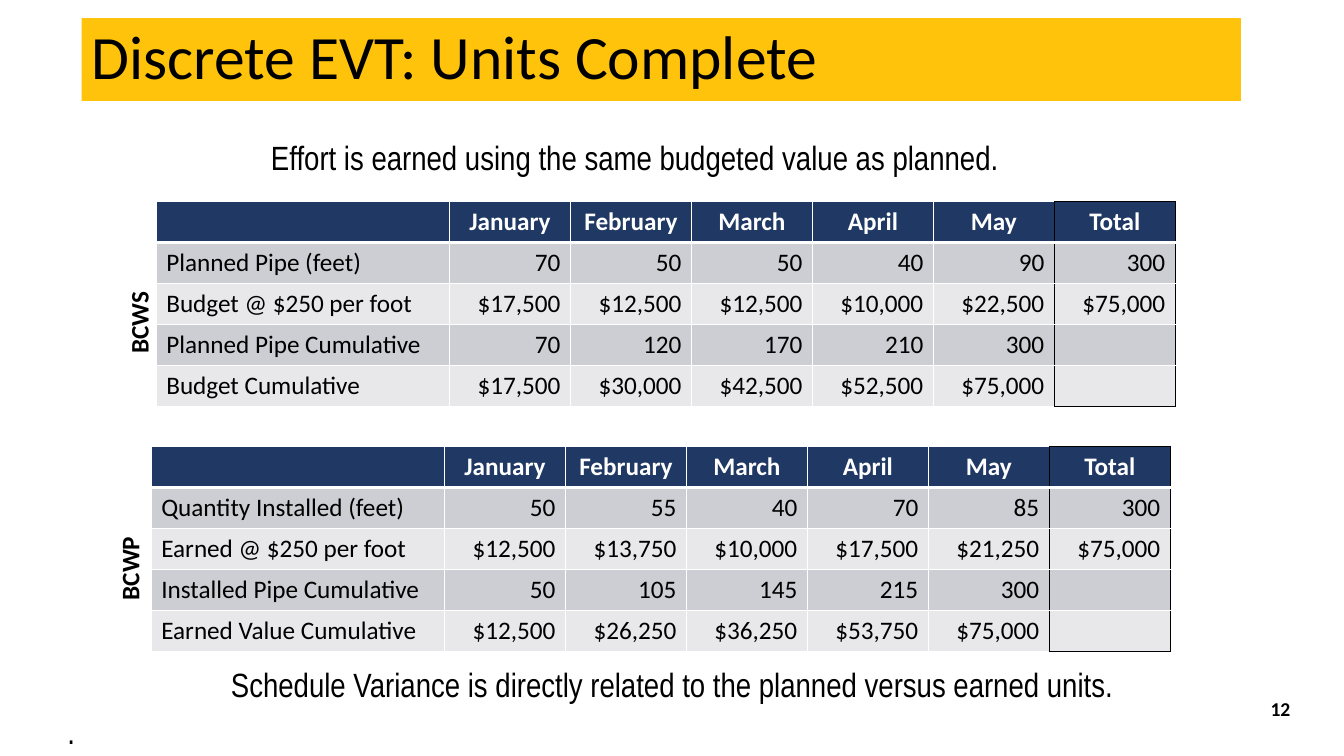
from itertools import accumulate

from lxml import etree
from pptx import Presentation
from pptx.dml.color import RGBColor
from pptx.enum.shapes import MSO_SHAPE
from pptx.enum.text import MSO_ANCHOR, MSO_AUTO_SIZE, PP_ALIGN
from pptx.oxml.ns import qn
from pptx.util import Inches, Pt

LEFT, CENTER, RIGHT = PP_ALIGN.LEFT, PP_ALIGN.CENTER, PP_ALIGN.RIGHT
TOP, MIDDLE = MSO_ANCHOR.TOP, MSO_ANCHOR.MIDDLE
GROW = MSO_AUTO_SIZE.SHAPE_TO_FIT_TEXT
RECT = MSO_SHAPE.RECTANGLE

BLACK = RGBColor(0, 0, 0)
WHITE = RGBColor(0xFF, 0xFF, 0xFF)
GOLD = RGBColor(0xFF, 0xC3, 0x0C)
NAVY = RGBColor(0x1F, 0x38, 0x64)
BANDS = RGBColor(0xE8, 0xE8, 0xEA), RGBColor(0xCD, 0xCE, 0xD3)

# The slide is a grid of 133.33 columns by 75 rows
GRID = Inches(0.1)
COLS, ROWS = 133.33, 75
LABEL, MONTH, LINE = 29.1, 12, 4.07

RATE = 250
HEADS = ["", "January", "February", "March", "April", "May", "Total"]
PLAN = [70, 50, 50, 40, 90]
DONE = [50, 55, 40, 70, 85]
PLAN_ROWS = ["Planned Pipe (feet)", "Budget @ $250 per foot",
             "Planned Pipe Cumulative", "Budget Cumulative"]
DONE_ROWS = ["Quantity Installed (feet)", "Earned @ $250 per foot",
             "Installed Pipe Cumulative", "Earned Value Cumulative"]

BODY = {"name": "Calibri", "size": Pt(18), "bold": False}
BOLD = {**BODY, "bold": True}
TITLE = {**BODY, "size": Pt(44)}
NUMBER = {**BOLD, "size": Pt(14)}
NOTE = {**BODY, "name": "Arial Narrow", "size": Pt(24)}


def span(*cells):
    return [round(n * GRID) for n in cells]


def apply(item, values):
    for key, value in values.items():
        setattr(item, key, value)


def write(par, text, font, align=LEFT, color=BLACK):
    par.alignment = align
    if text:
        run = par.add_run()
        run.text = text
        apply(run.font, font)
        run.font.color.rgb = color


def add_text(slide, box, lines, font, align=LEFT, anchor=TOP, turn=0):
    shape = slide.shapes.add_textbox(*span(*box))
    shape.rotation = turn
    frame = shape.text_frame
    apply(frame, {"word_wrap": True, "vertical_anchor": anchor})
    if anchor == TOP:
        frame.auto_size = GROW
    for i, text in enumerate(lines):
        par = frame.add_paragraph() if i else frame.paragraphs[0]
        write(par, text, font, LEFT if i else align)
    return frame


def add_note(slide, box, lines, align=LEFT):
    # Hanging indent with a little space before each line
    for par in add_text(slide, box, lines, NOTE, align).paragraphs:
        par.space_before = Pt(4.8)
        props = par._p.get_or_add_pPr()
        props.set("marL", str(Inches(0.25)))
        props.set("indent", str(-Inches(0.25)))


def add_title(slide, box, text):
    bar = slide.shapes.add_shape(RECT, *span(*box))
    bar.shadow.inherit = False
    bar.fill.solid()
    bar.fill.fore_color.rgb = GOLD
    bar.line.fill.background()
    apply(bar.text_frame, {"word_wrap": True, "vertical_anchor": MIDDLE})
    par = bar.text_frame.paragraphs[0]
    par.line_spacing = 0.9
    write(par, text, TITLE)


def add_edge(cell, side, color, width):
    props = cell._tc.get_or_add_tcPr()
    line = etree.SubElement(props, qn("a:ln" + side), w=str(Pt(width)))
    fill = etree.SubElement(line, qn("a:solidFill"))
    etree.SubElement(fill, qn("a:srgbClr"), val=str(color))


def edge_cell(cell, row, col, last):
    # The total column is framed in black, all other edges are white
    total = col == len(HEADS) - 1
    dark = {"L": total, "R": col >= len(HEADS) - 2,
            "T": total and row == 0, "B": total and row == last}
    thick = {"T": row == 1, "B": row == 0}
    for side, black in dark.items():
        add_edge(cell, side, BLACK if black else WHITE,
                 3 if thick.get(side) else 1)


def money(feet):
    return [f"${n * RATE:,}" for n in feet]


def fill_rows(names, feet):
    sums = list(accumulate(feet))
    whole = [sums[-1]]
    data = [feet + whole, money(feet + whole), sums + [""], money(sums) + [""]]
    return [HEADS] + [[name] + vals for name, vals in zip(names, data)]


def add_grid(slide, left, top, rows):
    width = LABEL + MONTH * (len(HEADS) - 1)
    box = span(left, top, width, LINE * len(rows))
    table = slide.shapes.add_table(len(rows), len(HEADS), *box).table
    table.horz_banding = False
    for i, column in enumerate(table.columns):
        column.width = span(MONTH if i else LABEL)[0]
    for r, values in enumerate(rows):
        table.rows[r].height = span(LINE)[0]
        for c, value in enumerate(values):
            cell = table.cell(r, c)
            edge_cell(cell, r, c, len(rows) - 1)
            cell.fill.solid()
            cell.fill.fore_color.rgb = BANDS[r % 2] if r else NAVY
            par = cell.text_frame.paragraphs[0]
            if r:
                write(par, str(value), BODY, RIGHT if c else LEFT)
            else:
                cell.vertical_anchor = MIDDLE
                write(par, value, BOLD, CENTER, WHITE)


def main():
    deck = Presentation()
    deck.slide_width, deck.slide_height = span(COLS, ROWS)
    slide = deck.slides.add_slide(deck.slide_layouts[6])

    # Title and opening note
    add_title(slide, (8.1, 1.8, 115, 8.2), "Discrete EVT: Units Complete")
    add_note(slide, (25.9, 13.1, 76.6, 5),
             ["Effort is earned using the same budgeted value as planned."])

    # Planned and earned tables with their side labels
    add_grid(slide, 15.5, 20, fill_rows(PLAN_ROWS, PLAN))
    add_grid(slide, 15, 44.3, fill_rows(DONE_ROWS, DONE))
    add_text(slide, (5.4, 30, 16.7, 4), ["BCWS"], BOLD, CENTER, turn=270)
    add_text(slide, (4.7, 54.4, 16.3, 4), ["BCWP"], BOLD, CENTER, turn=270)

    # Closing note and page number
    add_note(slide, (5.7, 65.4, 121.9, 9.9),
             ["Schedule Variance is directly related to the planned versus "
              "earned units.", "."], CENTER)
    add_text(slide, (99, 68.3, 30, 4), ["12"], NUMBER, RIGHT, MIDDLE)

    deck.save("out.pptx")


if __name__ == "__main__":
    main()
